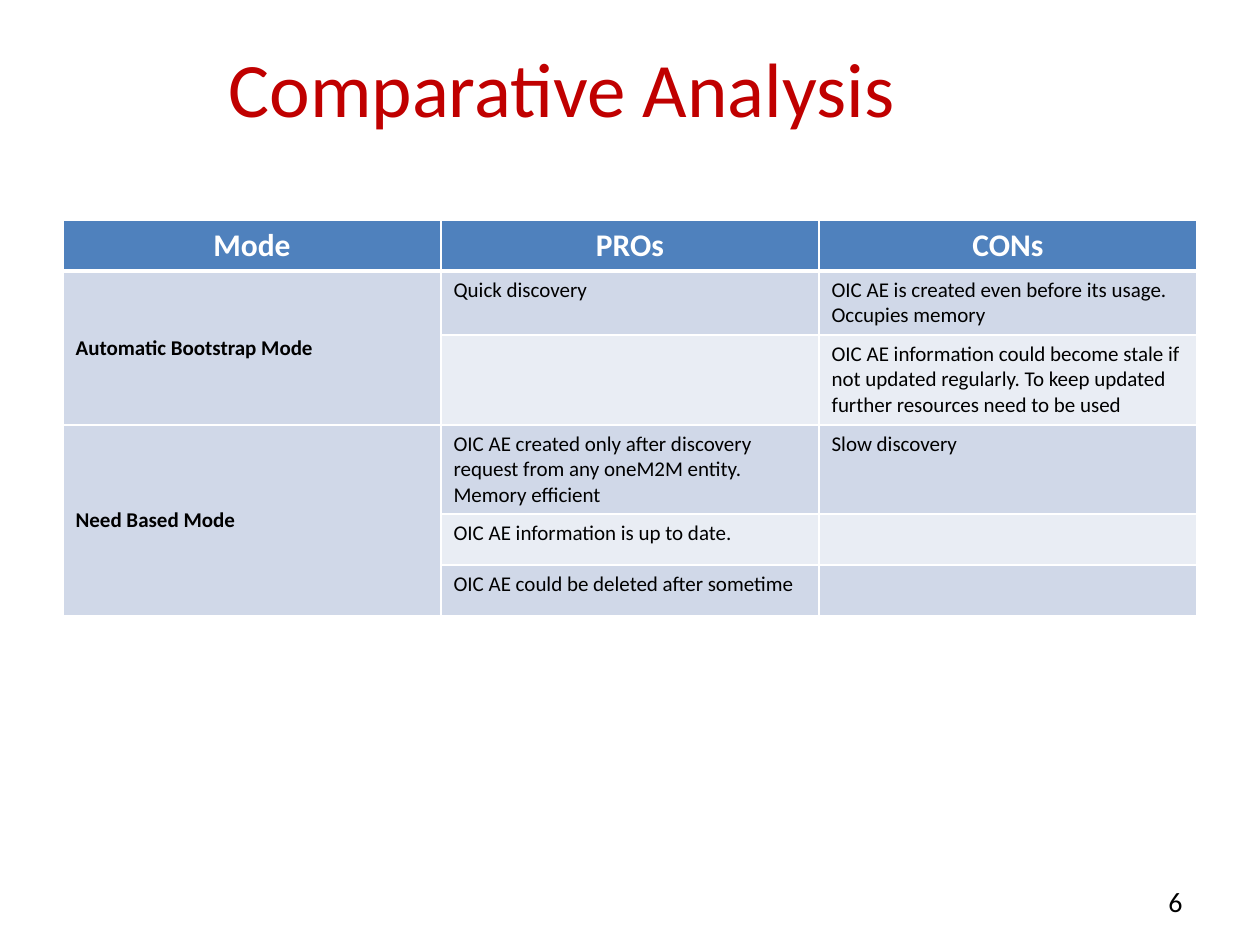
"""Build the comparative analysis slide of the two discovery modes."""
import dataclasses
import typing

import lxml.etree
import pptx
import pptx.dml.color
import pptx.enum.text
import pptx.oxml.ns
import pptx.util

EMU_PER_PX = 914400 / 126
ALIGN = pptx.enum.text.PP_ALIGN
ANCHOR = pptx.enum.text.MSO_ANCHOR


@dataclasses.dataclass(frozen=True)
class Theme:
    font: str = "Calibri"
    title: str = "C00000"
    ink: str = "000000"
    white: str = "FFFFFF"
    header: str = "4F81BD"
    bands: tuple[str, str] = ("D0D8E8", "E9EDF4")
    title_size: int = 44
    header_size: int = 18
    body_size: int = 12
    number_size: int = 16
    rule: int = 1
    header_rule: int = 3


@dataclasses.dataclass(frozen=True)
class Style:
    size: int
    color: str
    bold: bool = False
    align: ALIGN = ALIGN.LEFT
    anchor: ANCHOR = ANCHOR.TOP


@dataclasses.dataclass(frozen=True)
class Label:
    text: str
    box: tuple[int, int, int, int]
    style: Style
    wrap: bool = True


@dataclasses.dataclass(frozen=True)
class Row:
    height: int
    texts: tuple[str, str, str]
    mode_span: int = 1


THEME = Theme()
HEADING = Style(THEME.header_size, THEME.white, True, ALIGN.CENTER)
MODE = Style(THEME.body_size, THEME.ink, True, anchor=ANCHOR.MIDDLE)
BODY = Style(THEME.body_size, THEME.ink)

LABELS = [
    Label("6", (1137, 878, 58, 46),
          Style(THEME.number_size, THEME.ink, align=ALIGN.RIGHT), wrap=False),
    Label("Comparative Analysis", (63, 38, 998, 98),
          Style(THEME.title_size, THEME.title, align=ALIGN.CENTER, anchor=ANCHOR.MIDDLE)),
]

TABLE_LEFT, TABLE_TOP, COLUMN_WIDTH = 63, 220, 378
ROWS = [
    Row(51, ("Mode", "PROs", "CONs")),
    Row(64, ("Automatic Bootstrap Mode", "Quick discovery",
             "OIC AE is created even before its usage. Occupies memory"), 2),
    Row(90, ("", "",
             "OIC AE information could become stale if not updated regularly. "
             "To keep updated further resources need to be used")),
    Row(89, ("Need Based Mode",
             "OIC AE created only after discovery request from any oneM2M entity. "
             "Memory efficient", "Slow discovery"), 3),
    Row(51, ("", "OIC AE information is up to date.", "")),
    Row(51, ("", "OIC AE could be deleted after sometime", "")),
]


def px(length: int) -> pptx.util.Emu:
    """Turn a length in px into EMU."""
    return pptx.util.Emu(round(length * EMU_PER_PX))


def write(frame: typing.Any, text: str, style: Style) -> None:
    """Fill the first paragraph of a frame with styled text."""
    line = frame.paragraphs[0]
    line.alignment = style.align
    if text:
        line.add_run().text = text
    formats = {"name": THEME.font, "size": pptx.util.Pt(style.size), "bold": style.bold}
    for font in [line.font, *(run.font for run in line.runs)]:
        for attribute, value in formats.items():
            setattr(font, attribute, value)
        font.color.rgb = pptx.dml.color.RGBColor.from_string(style.color)


def draw_label(slide: typing.Any, label: Label) -> None:
    """Place one free-standing text on the slide."""
    frame = slide.shapes.add_textbox(*map(px, label.box)).text_frame
    formats = {"word_wrap": label.wrap, "vertical_anchor": label.style.anchor}
    for attribute, value in formats.items():
        setattr(frame, attribute, value)
    write(frame, label.text, label.style)


def draw_borders(cell: typing.Any, widths: dict[str, int]) -> None:
    """Give a cell white borders of the given widths in points."""
    qn = pptx.oxml.ns.qn
    properties = cell._tc.get_or_add_tcPr()
    for position, (side, width) in enumerate(widths.items()):
        border = lxml.etree.Element(qn(f"a:ln{side}"), w=str(pptx.util.Pt(width)))
        fill = lxml.etree.SubElement(border, qn("a:solidFill"))
        lxml.etree.SubElement(fill, qn("a:srgbClr"), val=THEME.white)
        properties.insert(position, border)


def draw_cell(cell: typing.Any, text: str, row: int, column: int) -> None:
    """Write, fill and border one table cell."""
    if row == 0:
        style, color = HEADING, THEME.header
    else:
        style = MODE if column == 0 else BODY
        color = THEME.bands[0 if column == 0 else (row - 1) % 2]
    write(cell.text_frame, text, style)
    cell.vertical_anchor = style.anchor
    cell.fill.solid()
    cell.fill.fore_color.rgb = pptx.dml.color.RGBColor.from_string(color)
    draw_borders(cell, {
        "L": THEME.rule,
        "R": THEME.rule,
        "T": THEME.header_rule if row == 1 else THEME.rule,
        "B": THEME.header_rule if row == 0 else THEME.rule,
    })


def draw_comparison(slide: typing.Any, rows: list[Row]) -> None:
    """Draw the table of pros and cons by mode."""
    columns = len(rows[0].texts)
    box = (TABLE_LEFT, TABLE_TOP, columns * COLUMN_WIDTH, sum(row.height for row in rows))
    comparison = slide.shapes.add_table(len(rows), columns, *map(px, box)).table
    for index, row in enumerate(rows):
        comparison.rows[index].height = px(row.height)
        if row.mode_span > 1:
            comparison.cell(index, 0).merge(comparison.cell(index + row.mode_span - 1, 0))
        for column, text in enumerate(row.texts):
            cell = comparison.cell(index, column)
            if not cell.is_spanned:
                draw_cell(cell, text, index, column)


def main() -> None:
    """Build and save the presentation."""
    deck = pptx.Presentation()
    for attribute, length in {"slide_width": 1260, "slide_height": 945}.items():
        setattr(deck, attribute, px(length))
    slide = deck.slides.add_slide(deck.slide_layouts[6])
    for label in LABELS:
        draw_label(slide, label)
    draw_comparison(slide, ROWS)
    deck.save("out.pptx")


if __name__ == "__main__":
    main()
